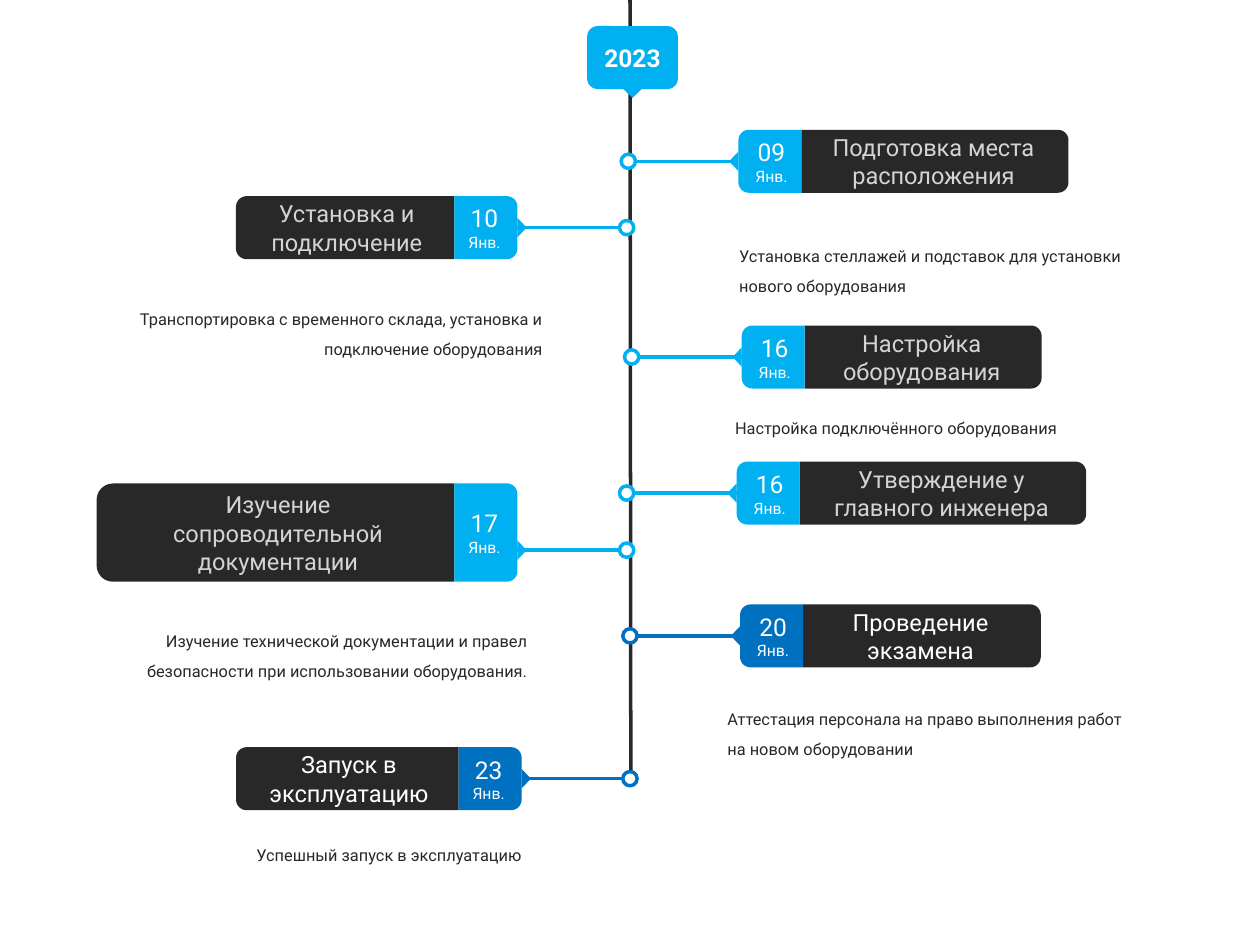
from lxml.etree import SubElement
from pptx import Presentation
from pptx.dml.color import RGBColor
from pptx.enum.shapes import MSO_CONNECTOR as Connector, MSO_SHAPE as Shape
from pptx.enum.text import MSO_ANCHOR as Anchor, PP_ALIGN as Align
from pptx.oxml.ns import qn
from pptx.util import Inches, Pt

FONT = "Roboto"
DARK, WHITE, GREY = "282828", "FFFFFF", "D4D4D4"
SKY, BLUE = "00B0F0", "0070C0"
MONTH = "Янв."
DATE_WIDTH, CARD_HEIGHT, RING = 0.75, 0.75, 0.17
POINTER_WIDTH, POINTER_HEIGHT = 0.23, 0.11
NOTE_WIDTH, NOTE_HEIGHT = 4.89, 1.07

# side (1 right, -1 left), day, title, accent, title colour,
# inner card edge, ring centre x, ring centre y, title length
EVENTS = [
    (1, "16", "Настройка оборудования", SKY, GREY, 8.83, 7.52, 4.25, 2.82),
    (-1, "17", "Изучение сопроводительной документации", SKY, GREY, 6.16, 7.46, 6.55, 4.26),
    (1, "09", "Подготовка места расположения", SKY, GREY, 8.79, 7.48, 1.92, 3.18),
    (-1, "10", "Установка и подключение", SKY, GREY, 6.16, 7.46, 2.71, 2.6),
    (1, "16", "Утверждение у главного инженера", SKY, GREY, 8.77, 7.46, 5.87, 3.41),
    (1, "20", "Проведение экзамена", BLUE, WHITE, 8.81, 7.5, 7.57, 2.83),
    (-1, "23", "Запуск в эксплуатацию", BLUE, WHITE, 6.21, 7.5, 9.27, 2.65),
]
# The three-line title needs a taller card: day -> (centre y, height)
TALL_CARDS = {"17": (6.34, 1.17)}

# side, edge the text is aligned to, top, text
NOTES = [
    (1, 8.75, 4.8, "Настройка подключённого оборудования"),
    (-1, 6.28, 7.34, "Изучение технической документации и правел безопасности "
                     "при использовании оборудования."),
    (1, 8.8, 2.76, "Установка стеллажей и подставок для установки нового оборудования"),
    (-1, 6.46, 3.51, "Транспортировка с временного склада, установка и "
                     "подключение оборудования"),
    (1, 8.66, 8.27, "Аттестация персонала на право выполнения работ на новом оборудовании"),
    (-1, 6.21, 9.89, "Успешный запуск в эксплуатацию"),
]


def rgb(value):
    return RGBColor.from_string(value)


def add_line(shapes, x1, y1, x2, y2, color):
    line = shapes.add_connector(Connector.STRAIGHT, *map(Inches, (x1, y1, x2, y2)))
    line.line.color.rgb = rgb(color)
    line.line.width = Pt(3)
    SubElement(line._element.spPr, qn("a:effectLst"))


def add_centred(shapes, kind, x, y, width, height, fill, rotation=0, outline=None):
    """Add a shape by its centre; width and height are before rotation."""
    shape = shapes.add_shape(kind, Inches(x - width / 2), Inches(y - height / 2),
                             Inches(width), Inches(height))
    shape.rotation = rotation
    shape.shadow.inherit = False
    shape.fill.solid()
    shape.fill.fore_color.rgb = rgb(fill)
    if outline:
        shape.line.color.rgb = rgb(outline)
        shape.line.width = Pt(3)
    else:
        shape.line.fill.background()
    return shape


def write(shape, text, sizes, color, align=Align.CENTER, bold=None, margins=None):
    frame = shape.text_frame
    frame.word_wrap = True
    frame.text = text
    if margins:
        frame.margin_left = frame.margin_right = Inches(margins[0])
        frame.margin_top = frame.margin_bottom = Inches(margins[1])
    for paragraph, size in zip(frame.paragraphs, sizes):
        paragraph.alignment = align
        font = paragraph.runs[0].font
        font.name, font.size, font.bold = FONT, Pt(size), bold
        font.color.rgb = rgb(color)
    return frame


def write_upright(shape, *args, **options):
    """Turn the text against the shape's quarter turn."""
    frame = write(shape, *args, **options)
    frame.vertical_anchor = Anchor.MIDDLE
    direction = "vert270" if shape.rotation == 90 else "vert"
    frame._txBody.bodyPr.set("vert", direction)


def add_event(slide, side, day, title, accent, title_color, edge, ring_x, y, length):
    shapes = slide.shapes.add_group_shape().shapes
    card_y, height = TALL_CARDS.get(day, (y, CARD_HEIGHT))
    outward, inward = (90, 270) if side == 1 else (270, 90)

    add_line(shapes, ring_x, y, edge, y, accent)
    add_centred(shapes, Shape.OVAL, ring_x, y, RING, RING, WHITE, outline=accent)

    body = add_centred(shapes, Shape.ROUND_2_SAME_RECTANGLE,
                       edge + side * (DATE_WIDTH + length / 2), card_y,
                       height, length, DARK, outward)
    write_upright(body, title, [20.2], title_color, margins=(0.23, 0.23))

    date = add_centred(shapes, Shape.ROUND_2_SAME_RECTANGLE,
                       edge + side * DATE_WIDTH / 2, card_y,
                       height, DATE_WIDTH, accent, inward)
    write_upright(date, f"{day}\n{MONTH}", [21, 13.5], WHITE)

    add_centred(shapes, Shape.ISOSCELES_TRIANGLE, edge - side * POINTER_HEIGHT / 2, y,
                POINTER_WIDTH, POINTER_HEIGHT, accent, inward)


def add_note(slide, side, edge, top, text):
    left = edge if side == 1 else edge - NOTE_WIDTH
    box = slide.shapes.add_textbox(*map(Inches, (left, top, NOTE_WIDTH, NOTE_HEIGHT)))
    align = Align.LEFT if side == 1 else Align.RIGHT
    paragraph = write(box, text, [14], DARK, align, margins=(0, 0.06)).paragraphs[0]
    paragraph.line_spacing = 1.5
    paragraph.space_before = Pt(10)


def main():
    presentation = Presentation()
    presentation.slide_width, presentation.slide_height = Inches(15), Inches(11.25)
    slide = presentation.slides.add_slide(presentation.slide_layouts[6])

    # Time axis and year label
    add_line(slide.shapes, 7.5, 0, 7.51, 9.36, DARK)
    label = slide.shapes.add_group_shape().shapes
    year = add_centred(label, Shape.ROUNDED_RECTANGLE, 7.53, 0.685, 1.08, 0.75, SKY)
    write(year, "2023", [21], WHITE, bold=True).vertical_anchor = Anchor.MIDDLE
    add_centred(label, Shape.ISOSCELES_TRIANGLE, 7.53, 1.11,
                POINTER_WIDTH, POINTER_HEIGHT, SKY, 180)

    # Events and their descriptions
    for event in EVENTS:
        add_event(slide, *event)
    for note in NOTES:
        add_note(slide, *note)

    presentation.save("out.pptx")


if __name__ == "__main__":
    main()
